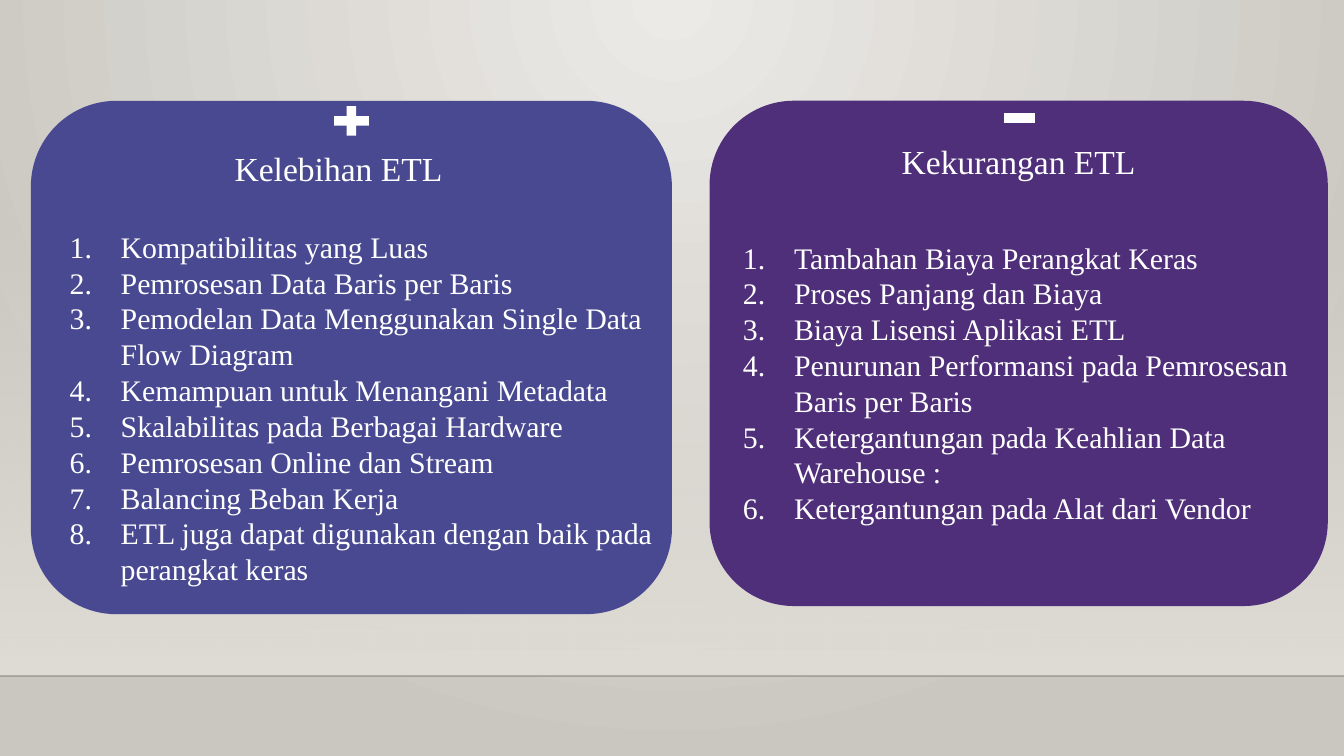
import pptx
import pptx.dml.color
import pptx.enum.shapes
import pptx.enum.text
import pptx.oxml.ns
import pptx.util
from lxml import etree

Inches = pptx.util.Inches
RGBColor = pptx.dml.color.RGBColor
Shape = pptx.enum.shapes.MSO_SHAPE
Align = pptx.enum.text.PP_ALIGN
qn = pptx.oxml.ns.qn

WHITE = RGBColor(0xFF, 0xFF, 0xFF)
BLUE = RGBColor(0x48, 0x49, 0x91)
PURPLE = RGBColor(0x4F, 0x2F, 0x79)
WALL_LIGHT = RGBColor(0xEC, 0xEA, 0xE7)
WALL_DARK = RGBColor(0xCA, 0xC7, 0xC1)
FLOOR_GLOW = RGBColor(0xDF, 0xDB, 0xD5)
FLOOR_LINE = RGBColor(0x00, 0x00, 0x01)

TITLE = {"size": pptx.util.Pt(18), "name": "Times New Roman"}
ITEM = {"size": pptx.util.Pt(16), "name": "Times New Roman"}
NUMBER_INDENT = Inches(0.38)

PANELS = [
    {
        "color": BLUE,
        "card": (0.23, 0.75, 4.77, 3.82),
        "sign": (Shape.MATH_PLUS, (2.44, 0.75, 0.35, 0.3)),
        "title": ("Kelebihan ETL", (0.29, 1, 4.46, 0.48)),
        "list": (0.42, 1.6, 4.63, 2.41),
        "items": [
            "Kompatibilitas yang Luas",
            "Pemrosesan Data Baris per Baris",
            "Pemodelan Data Menggunakan Single Data Flow Diagram",
            "Kemampuan untuk Menangani Metadata",
            "Skalabilitas pada Berbagai Hardware",
            "Pemrosesan Online dan Stream",
            "Balancing Beban Kerja",
            "ETL juga dapat digunakan dengan baik pada perangkat keras",
        ],
    },
    {
        "color": PURPLE,
        "card": (5.28, 0.75, 4.6, 3.76),
        "sign": (Shape.MATH_MINUS, (7.43, 0.73, 0.31, 0.3)),
        "title": ("Kekurangan ETL", (5.35, 0.95, 4.46, 0.48)),
        "list": (5.43, 1.68, 4.33, 2.34),
        "items": [
            "Tambahan Biaya Perangkat Keras",
            "Proses Panjang dan Biaya",
            "Biaya Lisensi Aplikasi ETL",
            "Penurunan Performansi pada Pemrosesan Baris per Baris",
            "Ketergantungan pada Keahlian Data Warehouse :",
            "Ketergantungan pada Alat dari Vendor",
        ],
    },
]


def set_gradient(fill, colors):
    fill.gradient()
    for stop, color, position in zip(fill.gradient_stops, colors, (0, 1)):
        stop.color.rgb = color
        stop.position = position


def set_alpha(element, percent):
    """Set the opacity of the first RGB colour inside an element."""
    color = next(element.iter(qn("a:srgbClr")))
    etree.SubElement(color, qn("a:alpha"), val=str(percent * 1000))


def paint_background(page):
    fill = page.background.fill
    set_gradient(fill, (WALL_LIGHT, WALL_DARK))
    # Turn the linear gradient into a circle centred at the top
    linear = next(page.element.iter(qn("a:lin")))
    circle = etree.Element(qn("a:path"), path="circle")
    etree.SubElement(circle, qn("a:fillToRect"), l="43000", t="0", r="43000", b="100000")
    linear.getparent().replace(linear, circle)


def add_shape(page, kind, place):
    shape = page.shapes.add_shape(kind, *map(Inches, place))
    shape.shadow.inherit = False
    shape.line.fill.background()
    return shape


def add_solid(page, kind, place, color):
    shape = add_shape(page, kind, place)
    shape.fill.solid()
    shape.fill.fore_color.rgb = color


def add_floor(page):
    glow = add_shape(page, Shape.RECTANGLE, (0, 1.66, 10, 3.37))
    set_gradient(glow.fill, (FLOOR_GLOW, FLOOR_GLOW))
    glow.fill.gradient_angle = 270
    set_alpha(glow.element.spPr, 0)

    edge = page.shapes.add_connector(
        pptx.enum.shapes.MSO_CONNECTOR.STRAIGHT,
        Inches(0), Inches(5.03), Inches(10), Inches(5.03))
    edge.line.width = pptx.util.Pt(1)
    edge.line.color.rgb = FLOOR_LINE
    set_alpha(edge.element.spPr, 20)
    etree.SubElement(edge.element.spPr, qn("a:effectLst"))


def number_paragraph(para):
    properties = para._p.get_or_add_pPr()
    properties.set("marL", str(NUMBER_INDENT))
    properties.set("indent", str(-NUMBER_INDENT))
    bullet_color = etree.SubElement(properties, qn("a:buClr"))
    etree.SubElement(bullet_color, qn("a:srgbClr"), val=str(WHITE))
    etree.SubElement(properties, qn("a:buAutoNum"), type="arabicPeriod")


def add_text(page, place, lines, font_format, numbered=False):
    box = page.shapes.add_textbox(*map(Inches, place))
    frame = box.text_frame
    frame.word_wrap = True
    for side in ("left", "top", "right", "bottom"):
        setattr(frame, f"margin_{side}", Inches(0.1))
    for index, line in enumerate(lines):
        para = frame.add_paragraph() if index else frame.paragraphs[0]
        if numbered:
            number_paragraph(para)
        else:
            para.alignment = Align.CENTER
        span = para.add_run()
        span.text = line
        for name, value in font_format.items():
            setattr(span.font, name, value)
        span.font.color.rgb = WHITE


def add_panel(page, panel):
    add_solid(page, Shape.ROUNDED_RECTANGLE, panel["card"], panel["color"])
    sign, sign_place = panel["sign"]
    add_solid(page, sign, sign_place, WHITE)
    title, title_place = panel["title"]
    add_text(page, title_place, [title], TITLE)
    add_text(page, panel["list"], panel["items"], ITEM, numbered=True)


def main():
    deck = pptx.Presentation()
    # Widescreen, 16:9
    deck.slide_width = Inches(10)
    deck.slide_height = Inches(10) * 9 // 16
    page = deck.slides.add_slide(deck.slide_layouts[6])

    # Backdrop
    paint_background(page)
    add_floor(page)

    # Advantages and drawbacks
    for panel in PANELS:
        add_panel(page, panel)

    deck.save("out.pptx")


if __name__ == "__main__":
    main()
